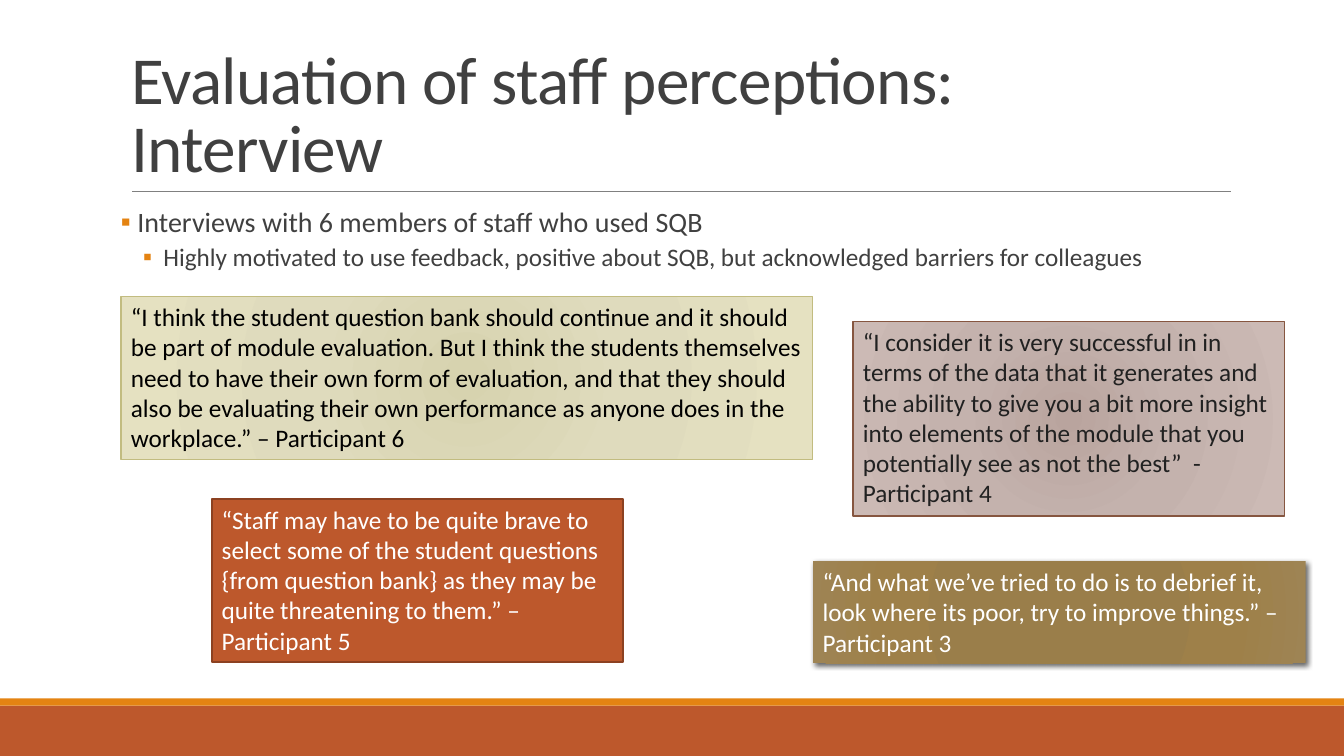
from lxml.etree import SubElement
from pptx import Presentation
from pptx.dml.color import RGBColor
from pptx.enum.shapes import MSO_CONNECTOR, MSO_SHAPE
from pptx.enum.text import MSO_ANCHOR, MSO_AUTO_SIZE, PP_ALIGN
from pptx.oxml.ns import qn
from pptx.util import Inches, Pt

FONT = "Calibri"
COLORS = {
    "rust": "BD582C", "orange": "E48312", "rule": "808080", "text": "404040",
    "rust edge": "8C4121", "olive edge": "C2BC80", "mauve edge": "865640",
    "black": "000000", "charcoal": "212121", "white": "FFFFFF",
}
GRADIENTS = {
    "olive": [(0, "D7D3AF"), (45, "DFDBBD"), (100, "E5E1C1")],
    "mauve": [(0, "B9A49E"), (45, "C4B2AD"), (100, "CCBAB5")],
    "bronze": [(0, "9A7D48"), (34, "9A7E4A"), (70, "9E8049"), (100, "9E8454")],
}
QUOTES = [
    dict(box=(1.2, 2.94, 6.86, 1.62), fill="olive", edge="olive edge", color="black",
         text="“I think the student question bank should continue and it should be part of "
              "module evaluation. But I think the students themselves need to have their own "
              "form of evaluation, and that they should also be evaluating their own "
              "performance as anyone does in the workplace.” – Participant 6"),
    dict(box=(8.46, 3.19, 4.28, 1.93), fill="mauve", edge="mauve edge", color="charcoal",
         text="“I consider it is very successful in in terms of the data that it generates "
              "and the ability to give you a bit more insight into elements of the module "
              "that you potentially see as not the best”  - Participant 4"),
    dict(box=(8.06, 5.57, 4.89, 1.01), fill="bronze", color="white", shadow=True,
         text="“And what we’ve tried to do is to debrief it, look where its poor, try to "
              "improve things.” – Participant 3"),
    dict(box=(2.1, 4.95, 4.08, 1.62), fill="rust", edge="rust edge", edge_width=1.25,
         color="white",
         text="“Staff may have to be quite brave to select some of the student questions "
              "{from question bank} as they may be quite threatening to them.” – "
              "Participant 5"),
]


def rgb(name):
    """Return the named palette colour."""
    return RGBColor.from_string(COLORS[name])


def write_text(paragraph, text, size=18, color="text", line_spacing=None, before=0, after=0):
    """Add one formatted run to a left-aligned paragraph and return it."""
    paragraph.alignment = PP_ALIGN.LEFT
    paragraph.line_spacing = line_spacing
    paragraph.space_before, paragraph.space_after = Pt(before), Pt(after)
    run = paragraph.add_run()
    run.text = text
    run.font.name, run.font.size = FONT, Pt(size)
    run.font.color.rgb = rgb(color)
    return run


def place(shape, box):
    """Move and size a shape to a box in inches."""
    shape.left, shape.top, shape.width, shape.height = map(Inches, box)


def add_bullet(paragraph, margin, hanging):
    """Give a paragraph a square orange bullet and a hanging indent."""
    properties = paragraph._p.get_or_add_pPr()
    properties.set("marL", str(Inches(margin)))
    properties.set("indent", str(-Inches(hanging)))
    color = SubElement(properties, qn("a:buClr"))
    SubElement(color, qn("a:srgbClr"), val=COLORS["orange"])
    SubElement(properties, qn("a:buFont"), typeface=FONT)
    SubElement(properties, qn("a:buChar"), char="▪")


def fill_radial(shape, stops):
    """Fill a shape with a circular gradient."""
    shape.fill.solid()
    solid = shape._element.spPr.find(qn("a:solidFill"))
    gradient = solid.makeelement(qn("a:gradFill"), {"rotWithShape": "1"})
    stop_list = SubElement(gradient, qn("a:gsLst"))
    for position, color in stops:
        stop = SubElement(stop_list, qn("a:gs"), pos=str(position * 1000))
        SubElement(stop, qn("a:srgbClr"), val=color)
    circle = SubElement(gradient, qn("a:path"), {"path": "circle"})
    SubElement(circle, qn("a:fillToRect"), dict.fromkeys("ltrb", "100000"))
    solid.getparent().replace(solid, gradient)


def add_shadow(shape):
    """Cast a soft shadow to the lower right."""
    effects = shape._element.spPr.find(qn("a:effectLst"))
    shadow = SubElement(effects, qn("a:outerShdw"), blurRad=str(Pt(3.5)), dist=str(Pt(2)),
                        dir="2700000", algn="br", rotWithShape="0")
    color = SubElement(shadow, qn("a:srgbClr"), val=COLORS["black"])
    SubElement(color, qn("a:alpha"), val="60000")


def add_box(slide, box, fill, edge=None, edge_width=1):
    """Add a filled rectangle, outlined only when an edge colour is given."""
    shape = slide.shapes.add_shape(MSO_SHAPE.RECTANGLE, *map(Inches, box))
    shape.shadow.inherit = False
    if fill in GRADIENTS:
        fill_radial(shape, GRADIENTS[fill])
    else:
        shape.fill.solid()
        shape.fill.fore_color.rgb = rgb(fill)
    if edge:
        shape.line.color.rgb = rgb(edge)
        shape.line.width = Pt(edge_width)
    else:
        shape.line.fill.background()
    return shape


def add_footer_bands(slide, box):
    """Draw the rust footer with its thin orange band on top."""
    left, top, width, height = box
    band = 0.07
    add_box(slide, (left, top + band, width, height - band), "rust")
    add_box(slide, (left, top, width, band), "orange")


def add_title(slide, box, text):
    """Place the title and the rule beneath it."""
    left, top, width, height = box
    bottom = Inches(top + height)
    rule = slide.shapes.add_connector(
        MSO_CONNECTOR.STRAIGHT, Inches(left + 0.11), bottom, Inches(left + width + 0.01), bottom)
    rule.line.color.rgb = rgb("rule")
    rule.line.width = Pt(0.5)
    SubElement(rule._element.spPr, qn("a:effectLst"))
    title = slide.shapes.title
    place(title, box)
    frame = title.text_frame
    frame.word_wrap, frame.auto_size = True, MSO_AUTO_SIZE.NONE
    frame.vertical_anchor = MSO_ANCHOR.BOTTOM
    frame.margin_right = Inches(0.3)
    run = write_text(frame.paragraphs[0], text, size=48, line_spacing=0.85)
    run.font._element.set("spc", "-50")


def add_summary(slide, box, heading, detail):
    """Fill the body placeholder with a bullet and its sub-bullet."""
    body = slide.placeholders[1]
    place(body, box)
    frame = body.text_frame
    frame.word_wrap, frame.auto_size = True, MSO_AUTO_SIZE.NONE
    frame.vertical_anchor = MSO_ANCHOR.TOP
    frame.margin_left = frame.margin_right = 0
    first = frame.paragraphs[0]
    write_text(first, heading, size=20, line_spacing=0.9, before=12, after=2)
    add_bullet(first, 0.1, 0.1)
    second = frame.add_paragraph()
    second.level = 1
    write_text(second, detail, line_spacing=0.9, before=2, after=4)
    add_bullet(second, 0.42, 0.2)


def add_quote(slide, box, text, color, shadow=False, **style):
    """Add one participant quote in a coloured box."""
    shape = add_box(slide, box, **style)
    if shadow:
        add_shadow(shape)
    frame = shape.text_frame
    frame.word_wrap, frame.auto_size = True, MSO_AUTO_SIZE.SHAPE_TO_FIT_TEXT
    frame.vertical_anchor = MSO_ANCHOR.TOP
    write_text(frame.paragraphs[0], text, color=color)


def main():
    """Build and save the interview slide."""
    presentation = Presentation()
    presentation.slide_width, presentation.slide_height = Inches(13.33), Inches(7.5)
    slide = presentation.slides.add_slide(presentation.slide_layouts[1])
    add_footer_bands(slide, (0, 6.93, 13.33, 0.57))
    add_title(slide, (1.2, 0.31, 11, 1.59), "Evaluation of staff perceptions: Interview")
    add_summary(slide, (1.2, 2.02, 10.63, 1.07),
                " Interviews with 6 members of staff who used SQB",
                "Highly motivated to use feedback, positive about SQB, "
                "but acknowledged barriers for colleagues")
    for quote in QUOTES:
        add_quote(slide, **quote)
    presentation.save("out.pptx")


if __name__ == "__main__":
    main()
